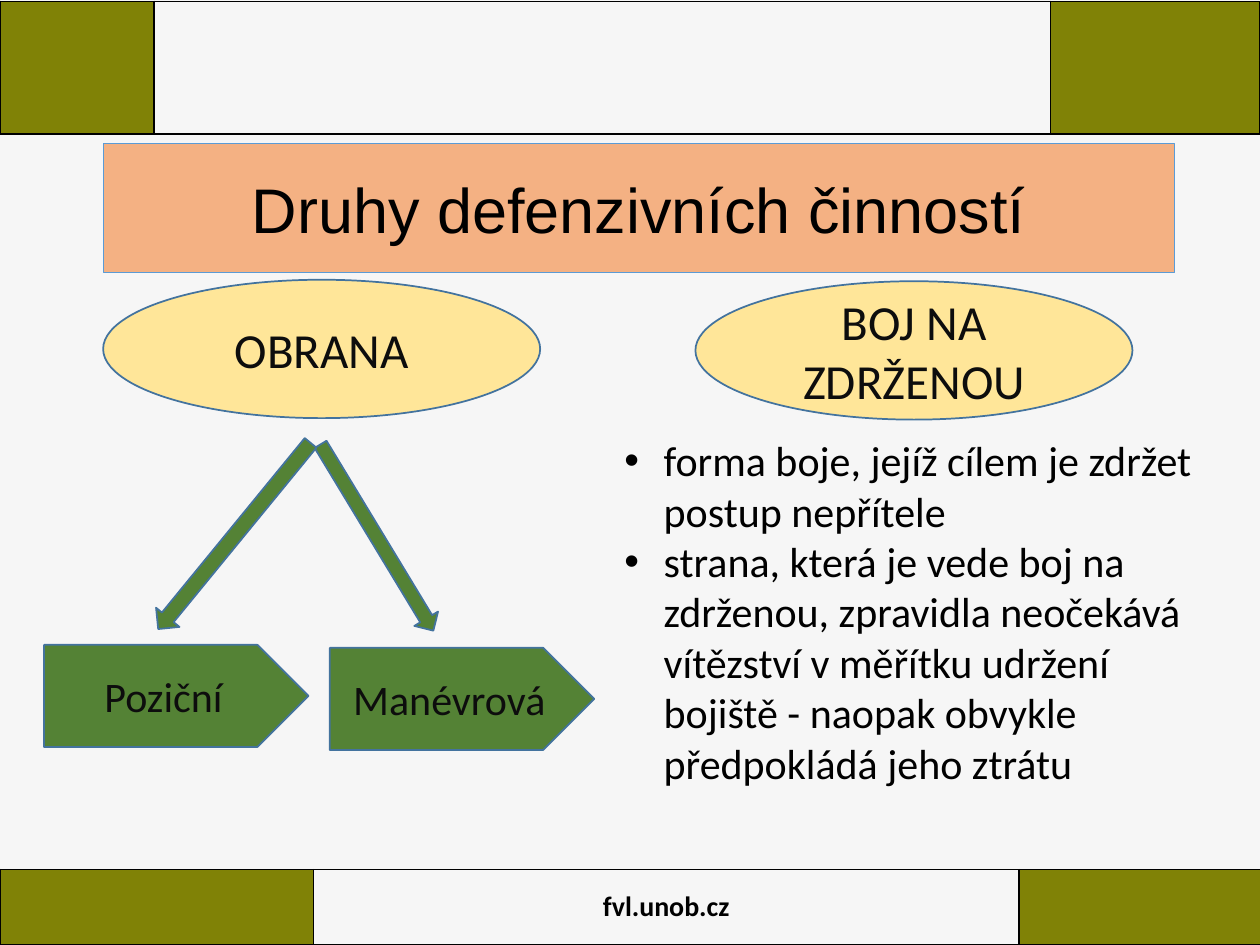
from dataclasses import dataclass

from lxml import etree
from pptx import Presentation
from pptx.dml.color import RGBColor
from pptx.enum.shapes import MSO_SHAPE
from pptx.enum.text import MSO_ANCHOR, MSO_AUTO_SIZE, PP_ALIGN
from pptx.oxml.ns import qn
from pptx.util import Cm, Pt

RECTANGLE, ELLIPSE = MSO_SHAPE.RECTANGLE, MSO_SHAPE.OVAL
PENTAGON, DOWN_ARROW = MSO_SHAPE.PENTAGON, MSO_SHAPE.DOWN_ARROW
CENTER, MIDDLE = PP_ALIGN.CENTER, MSO_ANCHOR.MIDDLE
GROW = MSO_AUTO_SIZE.SHAPE_TO_FIT_TEXT


@dataclass(frozen=True)
class Theme:
    background: str = "F6F6F6"
    olive: str = "808206"
    peach: str = "F4B183"
    title_line: str = "5B9BD5"
    cream: str = "FFE699"
    green: str = "548235"
    outline: str = "43739E"
    black: str = "000000"
    ink: str = "0D0D0D"
    title_font: str = "Arial"
    body_font: str = "Calibri"
    title_size: int = 36
    heading_size: int = 28
    body_size: int = 24
    footer_size: int = 16


THEME = Theme()


@dataclass(frozen=True)
class Box:
    """A rectangle in centimetres."""
    left: float
    top: float
    width: float
    height: float

    def inner(self, left, top, width, height):
        return Box(self.left + left, self.top + top, width, height)

    def lengths(self):
        return [Cm(n) for n in (self.left, self.top, self.width, self.height)]


def rgb(value):
    return RGBColor.from_string(value)


def set_font(para, size, color=THEME.ink, name=THEME.body_font, bold=False):
    font = para.font
    font.name, font.size, font.bold = name, Pt(size), bold
    font.color.rgb = rgb(color)


def add_figure(page, kind, box, fill, line=THEME.outline, line_width=1, rotation=0):
    shape = page.shapes.add_shape(kind, *box.lengths())
    shape.shadow.inherit = False
    shape.fill.solid()
    shape.fill.fore_color.rgb = rgb(fill)
    shape.line.color.rgb = rgb(line)
    shape.line.width = Pt(line_width)
    shape.rotation = rotation
    return shape


def add_label(shape, text, size, **font):
    frame = shape.text_frame
    frame.word_wrap = True
    frame.vertical_anchor = MIDDLE
    para = frame.paragraphs[0]
    para.text = text
    para.alignment = CENTER
    set_font(para, size, **font)


def add_borders(cell):
    properties = cell._tc.get_or_add_tcPr()
    for side in ("lnL", "lnR", "lnT", "lnB"):
        line = etree.SubElement(properties, qn(f"a:{side}"), w=str(Pt(1)))
        fill = etree.SubElement(line, qn("a:solidFill"))
        etree.SubElement(fill, qn("a:srgbClr"), val=THEME.black)


def add_band(page, box, widths, text=""):
    """One-row table with olive ends and a clear middle cell."""
    table = page.shapes.add_table(1, len(widths), *box.lengths()).table
    table.first_row = table.horz_banding = False
    table.rows[0].height = Cm(box.height)
    for index, width in enumerate(widths):
        table.columns[index].width = Cm(width)
        cell = table.cell(0, index)
        add_borders(cell)
        if index == 1:
            cell.fill.background()
        else:
            cell.fill.solid()
            cell.fill.fore_color.rgb = rgb(THEME.olive)
    if text:
        middle = table.cell(0, 1)
        middle.vertical_anchor = MIDDLE
        para = middle.text_frame.paragraphs[0]
        para.text = text
        para.alignment = CENTER
        set_font(para, THEME.footer_size, THEME.black, bold=True)


def add_title(page, box):
    bar = add_figure(page, RECTANGLE, box, THEME.peach, THEME.title_line, 0.5)
    add_label(bar, "Druhy defenzivních činností", THEME.title_size,
              color=THEME.black, name=THEME.title_font)


def add_headings(page, box):
    width = 8.81
    headings = (("OBRANA", 0, 0), ("BOJ NA ZDRŽENOU", box.width - width, 0.03))
    for text, left, top in headings:
        ellipse = add_figure(page, ELLIPSE, box.inner(left, top, width, 2.79), THEME.cream)
        add_label(ellipse, text, THEME.heading_size)


def add_defence_types(page, box):
    # Arrows spreading from the heading
    arrows = ((6.43, 0.26, 0.56, 4.39, 328.8), (3.53, 0, 0.61, 4.85, 39.3))
    for *place, rotation in arrows:
        add_figure(page, DOWN_ARROW, box.inner(*place), THEME.green, rotation=rotation)
    # Kinds of defence
    for text, left, top in (("Poziční", 0, 4.62), ("Manévrová", 5.76, 4.68)):
        plate = add_figure(page, PENTAGON, box.inner(left, top, 5.33, 2.06), THEME.green)
        add_label(plate, text, THEME.body_size)


def add_delay_points(page, box):
    frame = page.shapes.add_textbox(*box.lengths()).text_frame
    frame.word_wrap = True
    frame.auto_size = GROW
    points = (
        "forma boje, jejíž cílem je zdržet postup nepřítele",
        "strana, která je vede boj na zdrženou, zpravidla neočekává vítězství "
        "v měřítku udržení bojiště - naopak obvykle předpokládá jeho ztrátu",
    )
    for index, text in enumerate(points):
        para = frame.add_paragraph() if index else frame.paragraphs[0]
        para.text = text
        properties = para._p.get_or_add_pPr()
        properties.set("marL", str(Cm(0.79)))
        properties.set("indent", str(-Cm(0.79)))
        etree.SubElement(properties, qn("a:buFont"), typeface="Arial")
        etree.SubElement(properties, qn("a:buChar"), char="•")
        set_font(para, THEME.body_size, THEME.black)


def main():
    deck = Presentation()
    deck.slide_width, deck.slide_height = Cm(25.4), Cm(19.05)
    page = deck.slides.add_slide(deck.slide_layouts[6])
    page.background.fill.solid()
    page.background.fill.fore_color.rgb = rgb(THEME.background)

    # Footer and header bands
    add_band(page, Box(0, 17.53, 25.42, 1.52), (6.32, 14.22, 4.88), "fvl.unob.cz")
    add_band(page, Box(0, 0.03, 25.4, 2.67), (3.1, 18.08, 4.22))

    # Content
    add_headings(page, Box(2.08, 5.64, 20.75, 2.82))
    add_title(page, Box(2.08, 2.9, 21.59, 2.59))
    add_defence_types(page, Box(0.89, 8.38, 11.09, 6.74))
    add_delay_points(page, Box(12.34, 8.64, 12.7, 7.44))
    deck.save("out.pptx")


if __name__ == "__main__":
    main()
